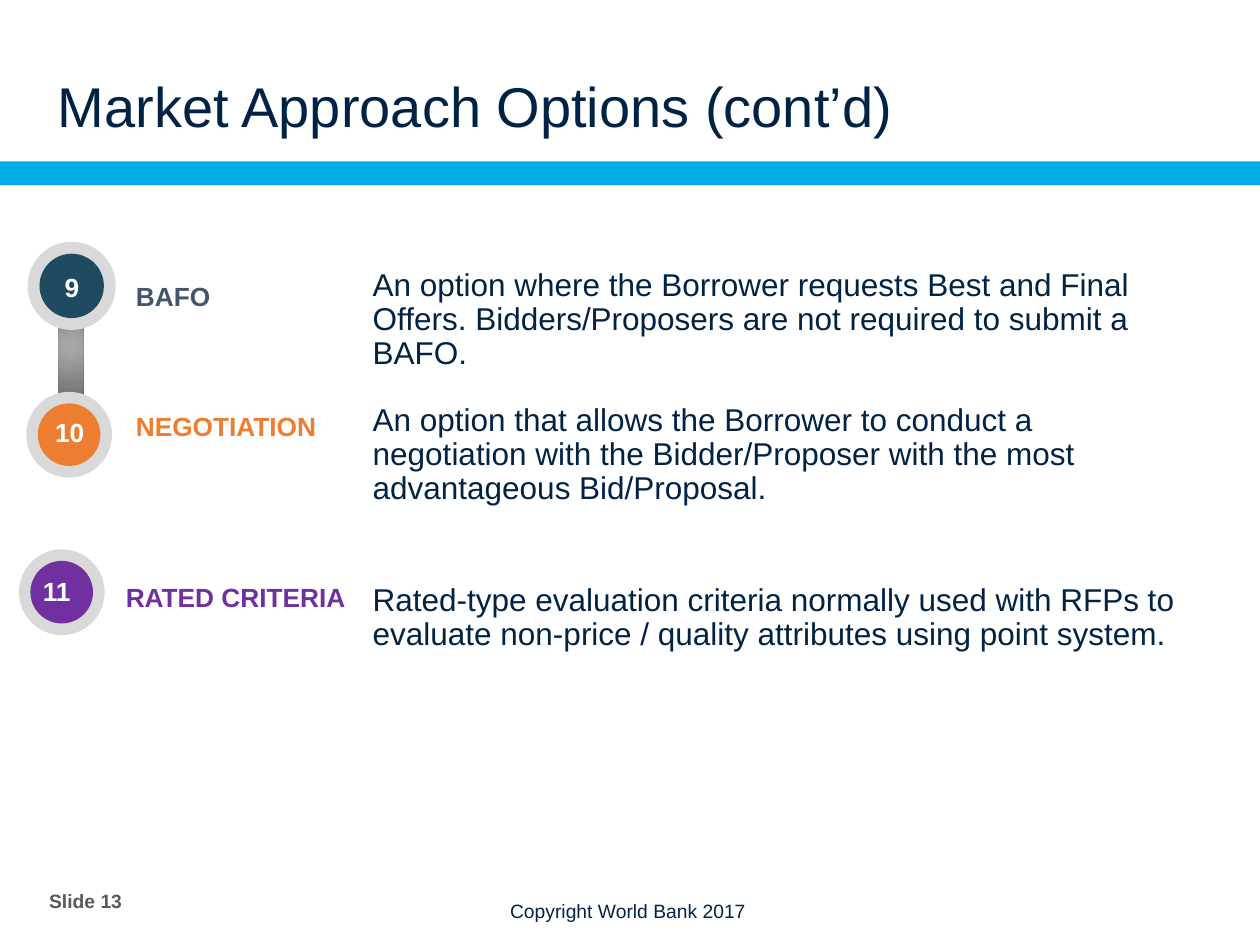
from dataclasses import dataclass

from lxml.etree import SubElement
from pptx import Presentation
from pptx.dml.color import RGBColor
from pptx.enum.shapes import MSO_SHAPE as Preset
from pptx.enum.text import MSO_ANCHOR as Anchor, PP_ALIGN as Align
from pptx.oxml.ns import qn
from pptx.shapes.autoshape import Shape
from pptx.slide import Slide
from pptx.util import Pt


@dataclass(frozen=True)
class Theme:
    font: str = "Arial"
    navy: str = "002345"
    band: str = "00ADE4"
    ring: str = "D9D9D9"
    footer: str = "595959"
    white: str = "FFFFFF"
    slate: str = "44546A"
    teal: str = "1F4B60"
    orange: str = "ED7D31"
    purple: str = "7030A0"
    bar_stops: tuple[tuple[int, str], ...] = ((7, "A6A6A6"), (48, "808080"), (100, "404040"))
    title_size: float = 32
    body_size: float = 18
    label_size: float = 15
    footer_size: float = 11


@dataclass(frozen=True)
class Box:
    left: float
    top: float
    width: float
    height: float

    def lengths(self) -> tuple[Pt, Pt, Pt, Pt]:
        return Pt(self.left), Pt(self.top), Pt(self.width), Pt(self.height)


@dataclass(frozen=True)
class Option:
    number: str
    label: str
    description: str
    disc_color: str
    label_color: str
    ring: Box
    number_box: Box
    label_box: Box
    description_box: Box


THEME = Theme()
DISC_INSET = 0.135
LABEL_WIDTH, LINE_HEIGHT = 163.4, 23.8
DESCRIPTION_LEFT, DESCRIPTION_WIDTH = 205.9, 479.5

OPTIONS = (
    Option("9", "BAFO",
           "An option where the Borrower requests Best and Final Offers. "
           "Bidders/Proposers are not required to submit a BAFO.",
           THEME.teal, THEME.slate,
           Box(15.8, 138.2, 50.4, 50.4),
           Box(23.8, 153.4, 34.6, LINE_HEIGHT),
           Box(70.6, 158.4, LABEL_WIDTH, LINE_HEIGHT),
           Box(DESCRIPTION_LEFT, 149.8, DESCRIPTION_WIDTH, 66.2)),
    Option("10", "NEGOTIATION",
           "An option that allows the Borrower to conduct a negotiation with the "
           "Bidder/Proposer with the most advantageous Bid/Proposal.",
           THEME.orange, THEME.orange,
           Box(15, 223.9, 49, 49),
           Box(23.8, 236.2, 32, LINE_HEIGHT),
           Box(70.6, 232.6, LABEL_WIDTH, LINE_HEIGHT),
           Box(DESCRIPTION_LEFT, 226.8, DESCRIPTION_WIDTH, 66.2)),
    Option("11", "RATED CRITERIA",
           "Rated-type evaluation criteria normally used with RFPs to evaluate "
           "non-price / quality attributes using point system.",
           THEME.purple, THEME.purple,
           Box(10.8, 313.9, 49, 49),
           Box(16.4, 326.9, 32, LINE_HEIGHT),
           Box(64.8, 330.5, LABEL_WIDTH, LINE_HEIGHT),
           Box(DESCRIPTION_LEFT, 329.8, DESCRIPTION_WIDTH, 46.8)),
)


def add_text(slide: Slide, box: Box, text: str, size: float, color: str, *,
             bold: bool = False, align: Align = Align.LEFT, anchor: Anchor = Anchor.MIDDLE,
             spacing: float = 1.0, inset: bool = True, wrap: bool = True) -> None:
    frame = slide.shapes.add_textbox(*box.lengths()).text_frame
    frame.word_wrap = wrap
    frame.vertical_anchor = anchor
    if not inset:
        frame.margin_left = frame.margin_right = frame.margin_top = frame.margin_bottom = 0
    line = frame.paragraphs[0]
    line.text = text
    line.alignment = align
    line.line_spacing = spacing
    line.font.name = THEME.font
    line.font.size = Pt(size)
    line.font.bold = bold
    line.font.color.rgb = RGBColor.from_string(color)


def add_filled(slide: Slide, preset: Preset, box: Box, color: str) -> Shape:
    shape = slide.shapes.add_shape(preset, *box.lengths())
    shape.shadow.inherit = False
    shape.line.fill.background()
    shape.fill.solid()
    shape.fill.fore_color.rgb = RGBColor.from_string(color)
    return shape


def add_bar(slide: Slide, box: Box) -> None:
    bar = add_filled(slide, Preset.RECTANGLE, box, THEME.bar_stops[0][1])
    bar.fill.gradient()
    gradient = bar.element.spPr.find(qn("a:gradFill"))
    for child in list(gradient):
        gradient.remove(child)
    stops = SubElement(gradient, qn("a:gsLst"))
    for percent, color in THEME.bar_stops:
        stop = SubElement(stops, qn("a:gs"), pos=str(percent * 1000))
        SubElement(stop, qn("a:srgbClr"), val=color)
    radial = SubElement(gradient, qn("a:path"), path="circle")
    SubElement(radial, qn("a:fillToRect"), l="50000", t="50000", r="50000", b="50000")


def add_option(slide: Slide, option: Option) -> None:
    ring = option.ring
    inset = ring.width * DISC_INSET
    disc = Box(ring.left + inset, ring.top + inset, ring.width - 2 * inset, ring.height - 2 * inset)
    add_filled(slide, Preset.OVAL, ring, THEME.ring)
    add_filled(slide, Preset.OVAL, disc, option.disc_color)
    add_text(slide, option.number_box, option.number, THEME.label_size, THEME.white,
             bold=True, align=Align.CENTER, spacing=0.9)
    add_text(slide, option.label_box, option.label, THEME.label_size, option.label_color,
             bold=True, spacing=0.9)
    add_text(slide, option.description_box, option.description, THEME.body_size, THEME.navy,
             spacing=0.9)


def main() -> None:
    deck = Presentation()
    deck.slide_width, deck.slide_height = Pt(720), Pt(540)
    slide = deck.slides.add_slide(deck.slide_layouts[6])

    add_text(slide, Box(33.1, 19.4, 666, 59.8), "Market Approach Options (cont’d)",
             THEME.title_size, THEME.navy, anchor=Anchor.BOTTOM, inset=False)
    add_filled(slide, Preset.RECTANGLE, Box(0, 92.2, 720, 13.6), THEME.band)

    add_bar(slide, Box(33.6, 150.5, 14, 94.3))
    for option in OPTIONS:
        add_option(slide, option)

    add_text(slide, Box(28.1, 500.4, 49.7, 28.8), "Slide 13", THEME.footer_size, THEME.footer,
             bold=True, inset=False)
    add_text(slide, Box(284.4, 510.5, 153.4, 20.9), "Copyright World Bank 2017",
             THEME.footer_size, THEME.navy, anchor=Anchor.TOP, wrap=False)
    deck.save("out.pptx")


if __name__ == "__main__":
    main()
